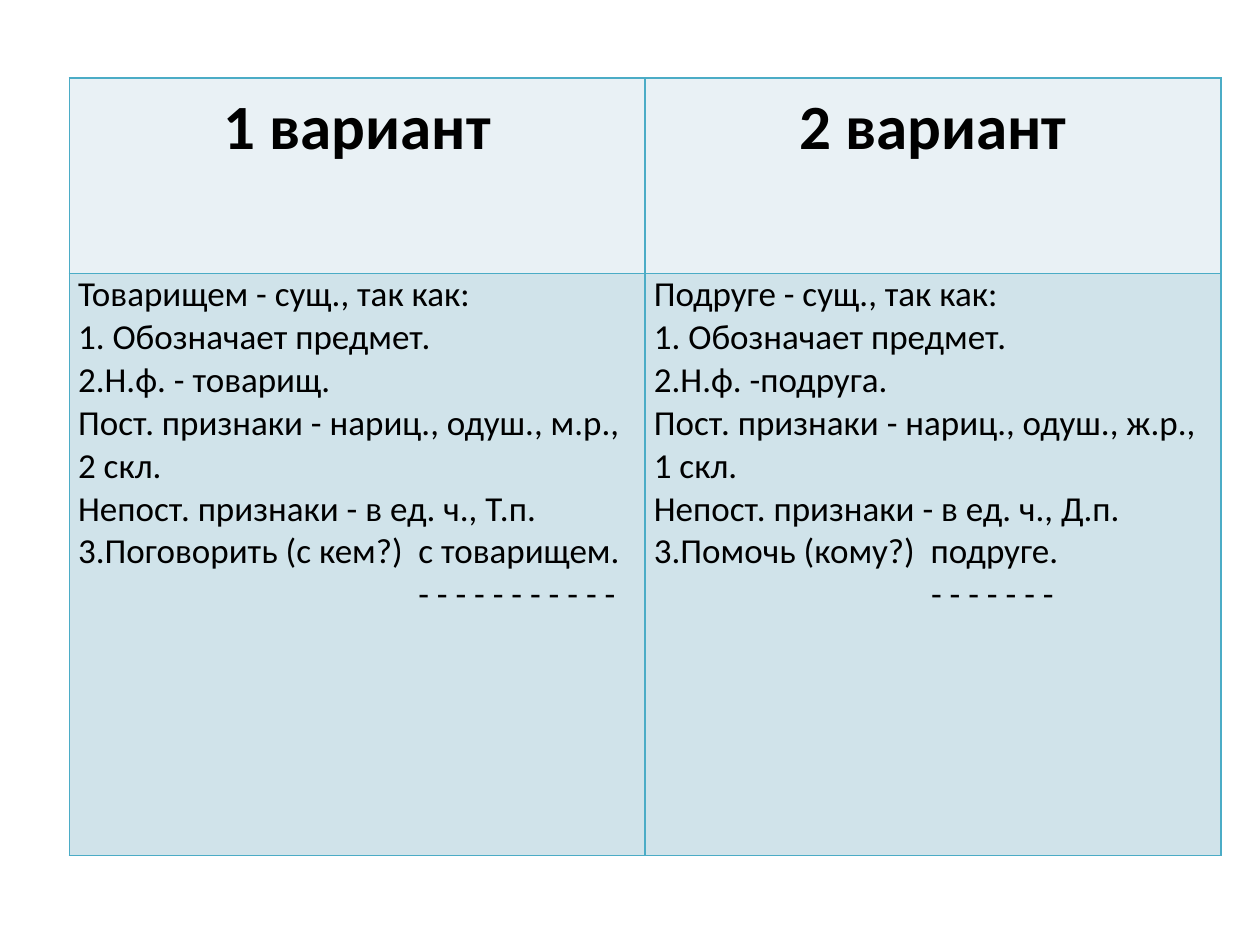
from dataclasses import dataclass

import pptx
import pptx.dml.color
import pptx.enum.text
import pptx.oxml.ns
import pptx.table
import pptx.text.text
import pptx.util
from lxml import etree

Inches = pptx.util.Inches
Pt = pptx.util.Pt
RGBColor = pptx.dml.color.RGBColor
PP_ALIGN = pptx.enum.text.PP_ALIGN
qn = pptx.oxml.ns.qn

BLACK = RGBColor(0x00, 0x00, 0x00)
HEADER_FILL = RGBColor(0xE9, 0xF1, 0xF5)
ANSWER_FILL = RGBColor(0xD0, 0xE3, 0xEA)
BORDER = RGBColor(0x4B, 0xAC, 0xC6)

FONT = "Calibri"
COLUMN_WIDTH = 4.57
ROW_HEIGHTS = (1.55, 4.62)


@dataclass(frozen=True)
class Variant:
    title: str
    answer: tuple[str, ...]
    underline: str
    underline_indent: float


VARIANTS = (
    Variant(
        "1 вариант",
        (
            "Товарищем - сущ., так как:",
            "1. Обозначает предмет.",
            "2.Н.ф. - товарищ.",
            "Пост. признаки - нариц., одуш., м.р., 2 скл.",
            "Непост. признаки - в ед. ч., Т.п.",
            "3.Поговорить (с кем?)  с товарищем.",
        ),
        "- - - - - - - - - - -",
        2.7,
    ),
    Variant(
        "2 вариант",
        (
            "Подруге - сущ., так как:",
            "1. Обозначает предмет.",
            "2.Н.ф. -подруга.",
            "Пост. признаки - нариц., одуш., ж.р., 1 скл.",
            "Непост. признаки - в ед. ч., Д.п.",
            "3.Помочь (кому?)  подруге.",
        ),
        "- - - - - - -",
        2.2,
    ),
)


def write(
    paragraph: pptx.text.text._Paragraph,
    text: str,
    *,
    size: float = 20,
    bold: bool = False,
    align: PP_ALIGN = PP_ALIGN.LEFT,
    line_spacing: float = 1.0,
    space_after: float = 0,
    indent: float = 0,
) -> None:
    paragraph.alignment = align
    paragraph.line_spacing = line_spacing
    paragraph.space_after = Pt(space_after)
    if indent:
        paragraph._p.get_or_add_pPr().set("marL", str(Inches(indent)))
    run = paragraph.add_run()
    run.text = text
    run.font.name = FONT
    run.font.size = Pt(size)
    run.font.bold = bold
    run.font.color.rgb = BLACK


def style_cell(cell: pptx.table._Cell, fill: RGBColor) -> None:
    cell.margin_left = cell.margin_right = Inches(0.07)
    cell.margin_top = cell.margin_bottom = 0
    properties = cell._tc.get_or_add_tcPr()
    for side in ("a:lnL", "a:lnR", "a:lnT", "a:lnB"):
        line = etree.SubElement(properties, qn(side), w=str(Pt(1)))
        solid = etree.SubElement(line, qn("a:solidFill"))
        etree.SubElement(solid, qn("a:srgbClr"), val=str(BORDER))
    cell.fill.solid()
    cell.fill.fore_color.rgb = fill


def fill_column(table: pptx.table.Table, column: int, variant: Variant) -> None:
    header, answer = table.cell(0, column), table.cell(1, column)
    style_cell(header, HEADER_FILL)
    style_cell(answer, ANSWER_FILL)
    write(
        header.text_frame.paragraphs[0],
        variant.title,
        size=36,
        bold=True,
        align=PP_ALIGN.CENTER,
        line_spacing=1.15,
        space_after=10,
    )
    frame = answer.text_frame
    for index, text in enumerate(variant.answer):
        paragraph = frame.add_paragraph() if index else frame.paragraphs[0]
        write(paragraph, text)
    write(frame.add_paragraph(), variant.underline, indent=variant.underline_indent)


def main() -> None:
    presentation = pptx.Presentation()
    presentation.slide_width = Inches(10)
    presentation.slide_height = Inches(7.5)
    slide = presentation.slides.add_slide(presentation.slide_layouts[6])
    table = slide.shapes.add_table(
        len(ROW_HEIGHTS),
        len(VARIANTS),
        Inches(0.55),
        Inches(0.62),
        Inches(COLUMN_WIDTH * len(VARIANTS)),
        Inches(sum(ROW_HEIGHTS)),
    ).table
    for row, height in zip(table.rows, ROW_HEIGHTS):
        row.height = Inches(height)
    for index, variant in enumerate(VARIANTS):
        table.columns[index].width = Inches(COLUMN_WIDTH)
        fill_column(table, index, variant)
    presentation.save("out.pptx")


if __name__ == "__main__":
    main()
